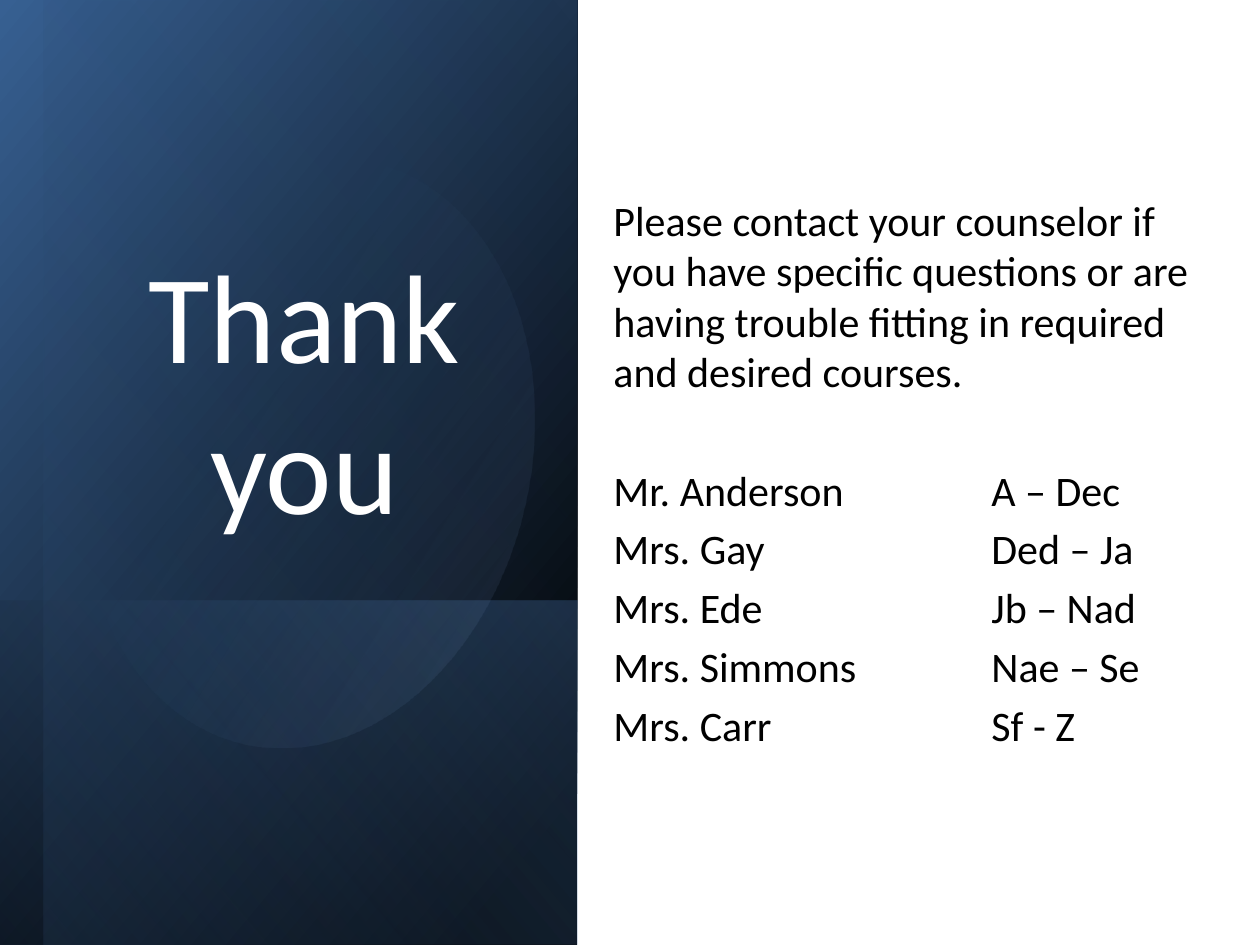
from pptx import Presentation
from pptx.dml.color import RGBColor
from pptx.enum.shapes import MSO_SHAPE
from pptx.enum.text import MSO_ANCHOR, MSO_AUTO_SIZE, PP_ALIGN
from pptx.oxml.ns import qn
from pptx.util import Inches, Pt
from lxml import etree

RECT, OVAL = MSO_SHAPE.RECTANGLE, MSO_SHAPE.OVAL
MIDDLE, BOTTOM = MSO_ANCHOR.MIDDLE, MSO_ANCHOR.BOTTOM
LEFT, CENTER = PP_ALIGN.LEFT, PP_ALIGN.CENTER
FIXED = MSO_AUTO_SIZE.NONE
TITLE_ONLY = 5

COLORS = {"black": "000000", "white": "FFFFFF", "navy": "376092",
          "blue": "4F81BD", "pale": "95B3D7"}


class Deck:
    font = "Calibri"

    def __init__(self, wide, high):
        self.prs = Presentation()
        self.prs.slide_width, self.prs.slide_height = Inches(wide), Inches(high)
        self.slide = self.prs.slides.add_slide(self.prs.slide_layouts[TITLE_ONLY])

    def area(self, x, y, w, h):
        """Turn shares of the slide into lengths."""
        wide, high = self.prs.slide_width, self.prs.slide_height
        return int(x * wide), int(y * high), int(w * wide), int(h * high)

    def glow(self, kind, box, turn, angle, stops, flip=False):
        """Gradient shape; stops are (position, color, opacity) in percent."""
        shape = self.slide.shapes.add_shape(kind, *box)
        shape.shadow.inherit = False
        shape.line.fill.background()
        shape.rotation = turn
        props = shape._element.spPr
        if flip:
            props.find(qn("a:xfrm")).set("flipH", "1")
        shape.fill.gradient()
        shape.fill.gradient_angle = 360 - angle
        for stop, (pos, color, _) in zip(shape.fill.gradient_stops, stops):
            stop.position = pos / 100
            stop.color.rgb = RGBColor.from_string(COLORS[color])
        for node, (_, _, alpha) in zip(props.iter(qn("a:srgbClr")), stops):
            if alpha < 100:
                etree.SubElement(node, qn("a:alpha"), val=str(alpha * 1000))

    def panel(self, x, y, w, h, angle, stops):
        """Upright area filled by a mirrored rectangle on a quarter turn."""
        left, top, wide, high = self.area(x, y, w, h)
        box = (left + (wide - high) // 2, top + (high - wide) // 2, high, wide)
        self.glow(RECT, box, 90, angle, stops, flip=True)

    def frame(self, shape, anchor):
        text = shape.text_frame
        text.word_wrap = True
        text.auto_size = FIXED
        text.vertical_anchor = anchor
        return text

    def label(self, para, text, size, color, align=LEFT):
        para.alignment = align
        run = para.add_run()
        run.text = text
        run.font.name, run.font.size = self.font, Pt(size)
        run.font.color.rgb = RGBColor.from_string(COLORS[color])

    def title(self, text, box):
        shape = self.slide.shapes.title
        shape.left, shape.top, shape.width, shape.height = self.area(*box)
        para = self.frame(shape, BOTTOM).paragraphs[0]
        self.label(para, text, 72, "white", CENTER)
        self.slide.shapes._spTree.append(shape._element)

    def roster(self, intro, rows, box, size=24, tab=3):
        """Lead paragraph, a gap, then rows in two tabbed columns."""
        text = self.frame(self.slide.shapes.add_textbox(*self.area(*box)), MIDDLE)
        first = text.paragraphs[0]
        first.space_before = Pt(size * 0.2)
        self.label(first, intro, size, "black")
        for i, row in enumerate(rows):
            para = text.add_paragraph()
            para.space_before = Pt(size * (0.2 if i else 1.62))
            stops = etree.SubElement(para._p.get_or_add_pPr(), qn("a:tabLst"))
            etree.SubElement(stops, qn("a:tab"), pos=str(Inches(tab)), algn="l")
            self.label(para, "\t".join(row), size, "black")


def main():
    deck = Deck(10, 7.5)

    # Dark side panel: base, lower band, right-hand veil, round glow
    edge, inset, fold = 0.458, 0.035, 0.635
    deck.panel(0, 0, edge, 1, 50, [(8, "black", 100), (100, "navy", 100)])
    deck.panel(0, fold, edge, 1 - fold, 130,
               [(2, "blue", 29), (100, "black", 30)])
    deck.panel(inset, 0, edge - inset, 1, 130,
               [(0, "black", 0), (99, "blue", 11)])
    deck.glow(OVAL, deck.area(0.008, 0.243, 0.472, 0.472), 101.6, 290,
              [(39, "blue", 0), (100, "pale", 15)])

    # Title on the panel
    deck.title("Thank you", (0.068, 0.085, 0.347, 0.493))

    # Counselor list
    deck.roster(
        "Please contact your counselor if you have specific questions or are "
        "having trouble fitting in required and desired courses.",
        [("Mr. Anderson", "A – Dec"), ("Mrs. Gay", "Ded – Ja"),
         ("Mrs. Ede", "Jb – Nad"), ("Mrs. Simmons", "Nae – Se"),
         ("Mrs. Carr", "Sf - Z")],
        (0.477, 0.095, 0.498, 0.809))

    deck.prs.save("out.pptx")


if __name__ == "__main__":
    main()
